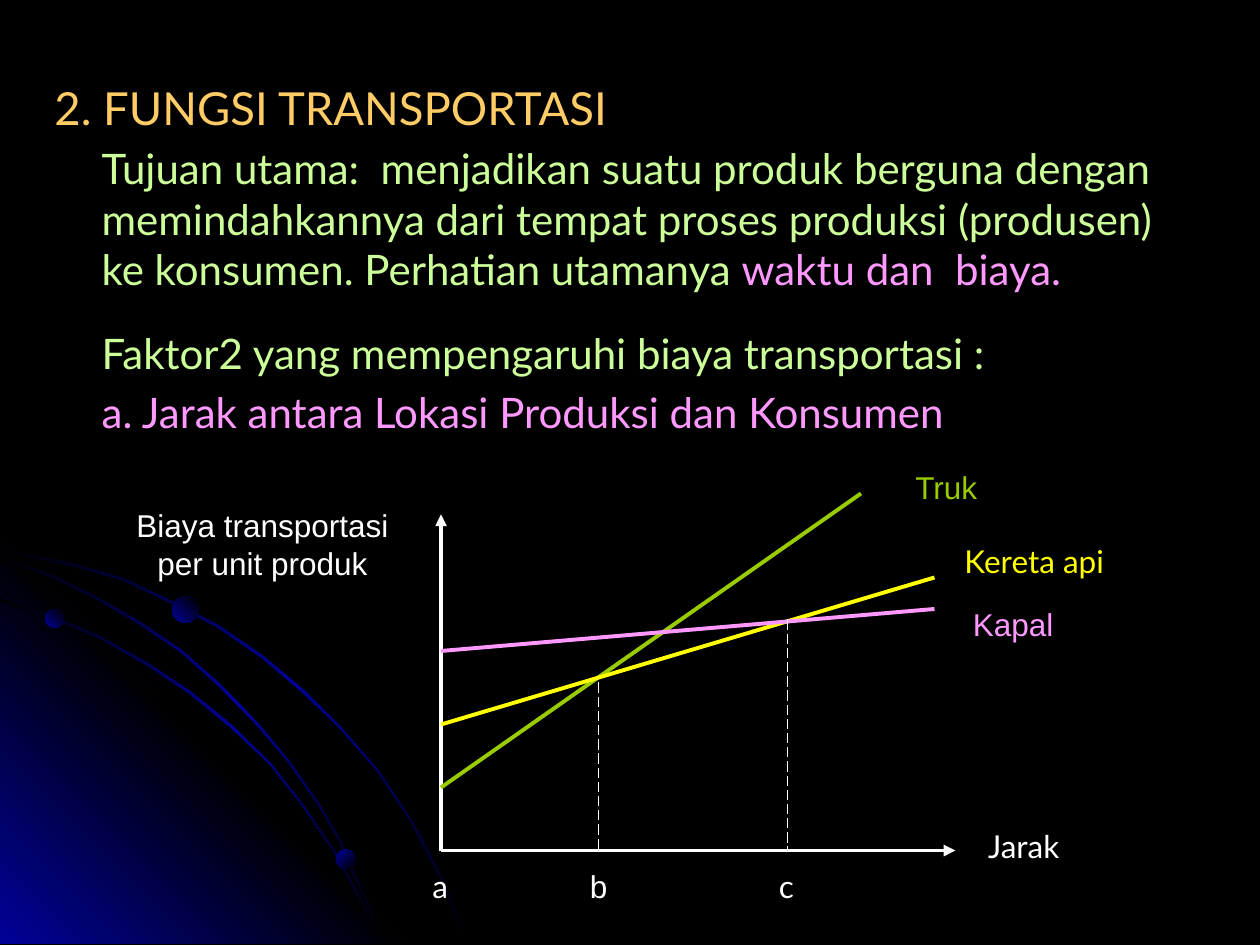
from lxml import etree
from pptx import Presentation
from pptx.dml.color import RGBColor
from pptx.enum.dml import MSO_LINE
from pptx.enum.shapes import MSO_CONNECTOR, MSO_SHAPE
from pptx.enum.text import PP_ALIGN
from pptx.oxml.ns import qn
from pptx.util import Pt

PX = 7620  # EMU per px, 120 px to the inch
LEFT, CENTER = PP_ALIGN.LEFT, PP_ALIGN.CENTER
LONG_DASH = MSO_LINE.LONG_DASH

BLACK, BLUE, WHITE = "000000", "010199", "FFFFFF"
ORANGE, MINT, PINK = "FFCC66", "CCFF99", "FF99FF"
GREEN, YELLOW = "99CC00", "FFFF00"

# Upper edge of each decorative arc, from left to right
ARCS = [
    [(0, 522), (34, 529), (68, 536), (118, 551), (163, 572), (209, 596),
     (251, 625), (290, 658), (326, 694), (360, 733), (390, 778), (407, 808),
     (422, 838), (434, 868), (446, 899)],
    [(0, 570), (49, 586), (95, 606), (140, 631), (182, 659), (221, 691),
     (258, 727), (290, 768), (319, 811), (343, 854), (355, 876), (364, 899)],
    [(0, 530), (47, 546), (91, 568), (133, 592), (173, 619), (210, 652),
     (245, 688), (275, 724), (305, 767), (323, 798), (338, 832), (353, 864),
     (364, 899)],
]
CORNER = [(386, 899), (0, 899), (0, 512)]
# left, top, diameter, gradient angle
DOTS = [(43, 580, 18, 315), (320, 809, 19, 45), (164, 568, 25, 315)]

BODY_BOX = (40, 70, 1100, 790)
BODY_INDENT = 45
# size, first-line indent in px, space before in points, coloured runs
BODY = [
    (26, -BODY_INDENT, 0, [("2. FUNGSI TRANSPORTASI", ORANGE)]),
    (24, 0, 5, [("Tujuan utama:  menjadikan suatu produk berguna dengan "
                 "memindahkannya dari tempat proses produksi (produsen) "
                 "ke konsumen. Perhatian utamanya ", MINT),
                ("waktu dan  biaya.", PINK)]),
    (24, 0, 19, [("Faktor2 yang mempengaruhi biaya transportasi :", MINT)]),
    (24, 0, 5, [("a. Jarak antara Lokasi Produksi dan Konsumen", PINK)]),
]

ORIGIN_X, ORIGIN_Y = 420, 810
AXIS_ENDS = [(420, 490), (910, 810)]
# start height on the cost axis, end point, colour
COST_LINES = [(750, (820, 470), GREEN), (690, (890, 550), YELLOW),
              (620, (890, 580), PINK)]
CROSSINGS = [(570, 650), (750, 590)]

# text, box, alignment, font, colour
LABELS = [
    ("Biaya transportasi per unit produk", (110, 476, 280, 84), CENTER, "Arial", WHITE),
    ("Jarak", (910, 782, 130, 48), CENTER, "Lato", WHITE),
    ("Truk", (860, 440, 90, 48), LEFT, "Arial", GREEN),
    ("Kereta api", (900, 510, 170, 48), CENTER, "Lato", YELLOW),
    ("Kapal", (910, 570, 110, 49), CENTER, "Arial", PINK),
    ("a", (400, 820, 60, 48), LEFT, "Lato", WHITE),
    ("b", (550, 820, 50, 48), LEFT, "Arial", WHITE),
    ("c", (730, 820, 60, 48), LEFT, "Lato", WHITE),
]


def color(value):
    return RGBColor.from_string(value)


def emu(lengths):
    return [round(length * PX) for length in lengths]


def paint_gradient(shape, colors, angle):
    """Spread the colours evenly; the angle runs clockwise."""
    shape.shadow.inherit = False
    shape.line.fill.background()
    shape.fill.gradient()
    shape.fill.gradient_angle = (360 - angle) % 360
    stops = shape._element.spPr.find(qn("a:gradFill")).find(qn("a:gsLst"))
    for stop in list(stops):
        stops.remove(stop)
    for index, value in enumerate(colors):
        position = str(100000 * index // (len(colors) - 1))
        stop = etree.SubElement(stops, qn("a:gs"), pos=position)
        etree.SubElement(stop, qn("a:srgbClr"), val=value)


def add_outline(shapes, points, colors, angle):
    builder = shapes.build_freeform(*points[0], scale=PX)
    builder.add_line_segments(points[1:], close=True)
    paint_gradient(builder.convert_to_shape(), colors, angle)


def arc_band(upper):
    """Close an arc with a lower edge that turns from 3 px below to 2 px left."""
    last = len(upper) - 1
    lower = [(round(x - 2 * i / last), round(y + 3 * (1 - i / last)))
             for i, (x, y) in enumerate(upper)]
    return upper + lower[::-1]


def add_line(shapes, start, end, value, width=2.25, dash=None, arrow=False):
    connector = shapes.add_connector(MSO_CONNECTOR.STRAIGHT, *emu(start + end))
    connector.line.color.rgb = color(value)
    connector.line.width = Pt(width)
    if dash:
        connector.line.dash_style = dash
    properties = connector._element.spPr
    if arrow:
        etree.SubElement(properties.find(qn("a:ln")), qn("a:tailEnd"), type="triangle")
    etree.SubElement(properties, qn("a:effectLst"))


def add_text_frame(shapes, box):
    frame = shapes.add_textbox(*emu(box)).text_frame
    frame.word_wrap = True
    return frame


def add_run(paragraph, text, size, font, value):
    run = paragraph.add_run()
    run.text = text
    for name, setting in {"size": Pt(size), "name": font}.items():
        setattr(run.font, name, setting)
    run.font.color.rgb = color(value)


def add_body(shapes):
    frame = add_text_frame(shapes, BODY_BOX)
    for index, (size, indent, space, runs) in enumerate(BODY):
        paragraph = frame.add_paragraph() if index else frame.paragraphs[0]
        paragraph.space_before = Pt(space)
        properties = paragraph._p.get_or_add_pPr()
        properties.set("marL", str(BODY_INDENT * PX))
        properties.set("indent", str(indent * PX))
        for text, value in runs:
            add_run(paragraph, text, size, "Lato", value)


def main():
    presentation = Presentation()
    presentation.slide_width, presentation.slide_height = emu((1200, 900))
    slide = presentation.slides.add_slide(presentation.slide_layouts[6])
    slide.background.fill.solid()
    slide.background.fill.fore_color.rgb = color(BLACK)
    shapes = slide.shapes

    add_outline(shapes, CORNER, [BLUE, BLACK, BLUE], 315)
    for arc in ARCS:
        add_outline(shapes, arc_band(arc), [BLACK, BLUE, BLACK], 45)
    for left, top, diameter, angle in DOTS:
        dot = shapes.add_shape(MSO_SHAPE.OVAL, *emu((left, top, diameter, diameter)))
        paint_gradient(dot, [BLUE, BLACK], angle)

    add_body(shapes)
    for end in AXIS_ENDS:
        add_line(shapes, (ORIGIN_X, ORIGIN_Y), end, WHITE, arrow=True)
    for start_y, end, value in COST_LINES:
        add_line(shapes, (ORIGIN_X, start_y), end, value)
    for x, y in CROSSINGS:
        add_line(shapes, (x, y), (x, ORIGIN_Y), WHITE, 0.75, LONG_DASH)
    for text, box, alignment, font, value in LABELS:
        paragraph = add_text_frame(shapes, box).paragraphs[0]
        paragraph.alignment = alignment
        add_run(paragraph, text, 18, font, value)

    presentation.save("out.pptx")


if __name__ == "__main__":
    main()
